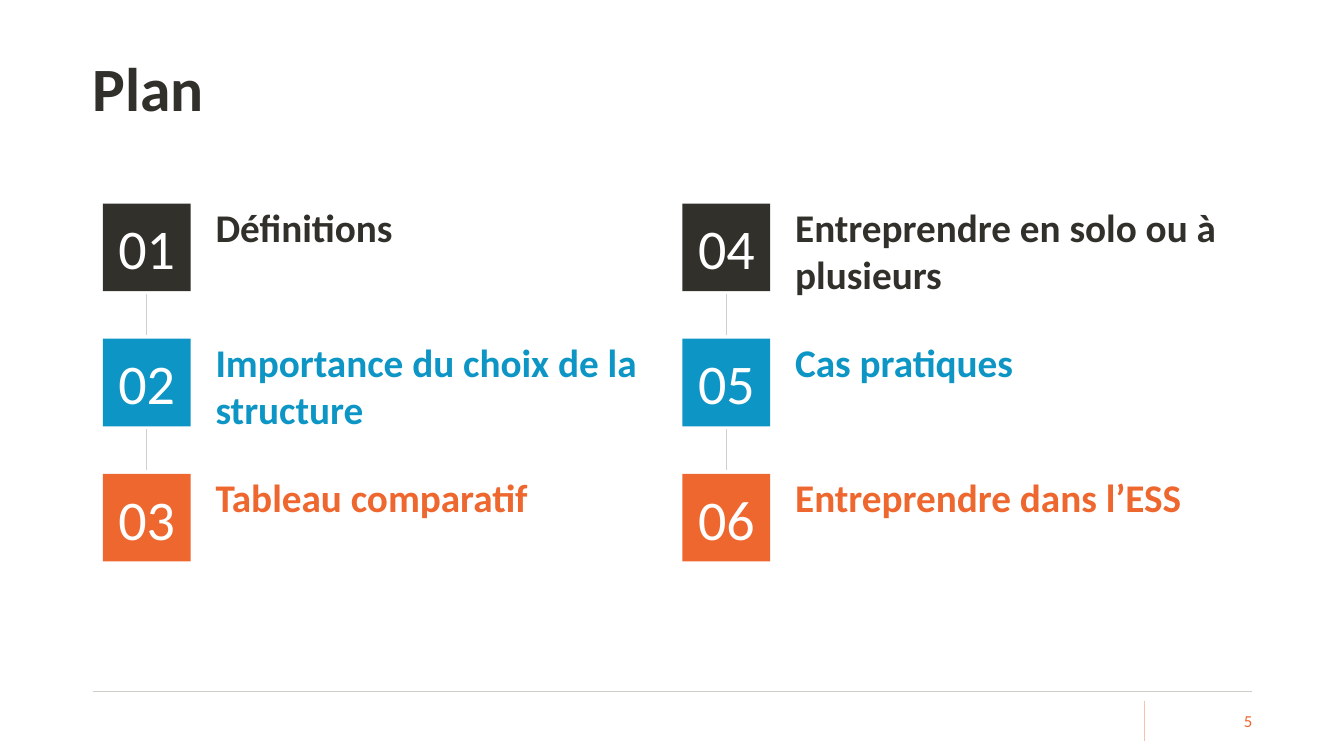
from lxml import etree
from pptx import Presentation
from pptx import util as u
from pptx.dml.color import RGBColor
from pptx.enum import shapes, text
from pptx.oxml import ns

COLORS = {
    "dark": "31302B",
    "blue": "0D96C5",
    "orange": "EE672F",
    "white": "FFFFFF",
    "link": "D0CECE",
    "rule": "CECDC7",
    "divider": "F8C2AC",
}


class PlanSlide:
    """Holds the style and the slide; lengths are percentages of the slide's size."""

    font = "Calibri"

    def __init__(self, presentation):
        self.width = presentation.slide_width
        self.height = presentation.slide_height
        self.slide = presentation.slides.add_slide(presentation.slide_layouts[6])

    def scale(self, x, y):
        return round(self.width * x / 100), round(self.height * y / 100)

    def color(self, name):
        return RGBColor.from_string(COLORS[name])

    def set_text(self, shape, content, size, color, bold=False, align="LEFT",
                 anchor="MIDDLE", insets=(0.1, 0.05, 0.1, 0.05)):
        frame = shape.text_frame
        frame.text = content
        frame.word_wrap = True
        frame.vertical_anchor = text.MSO_ANCHOR[anchor]
        (frame.margin_left, frame.margin_top,
         frame.margin_right, frame.margin_bottom) = map(u.Inches, insets)
        paragraph = frame.paragraphs[0]
        paragraph.alignment = text.PP_ALIGN[align]
        font = paragraph.runs[0].font
        font.name, font.size, font.bold = self.font, u.Pt(size), bold
        font.color.rgb = self.color(color)
        return frame

    def textbox(self, x, y, width, height, content, size, color, **style):
        shape = self.slide.shapes.add_textbox(
            *self.scale(x, y), *self.scale(width, height))
        return self.set_text(shape, content, size, color, **style)

    def square(self, x, y, width, height, content, fill):
        shape = self.slide.shapes.add_shape(
            shapes.MSO_SHAPE.RECTANGLE, *self.scale(x, y), *self.scale(width, height))
        shape.shadow.inherit = False
        shape.fill.solid()
        shape.fill.fore_color.rgb = self.color(fill)
        shape.line.fill.background()
        self.set_text(shape, content, 40, "white", align="CENTER")

    def line(self, x1, y1, x2, y2, color):
        connector = self.slide.shapes.add_connector(
            shapes.MSO_CONNECTOR.STRAIGHT, *self.scale(x1, y1), *self.scale(x2, y2))
        connector.line.width = u.Pt(0.5)
        connector.line.color.rgb = self.color(color)
        properties = connector.element.find(ns.qn("p:spPr"))
        etree.SubElement(properties, ns.qn("a:effectLst"))


# Agenda entries with their number of text lines
ENTRIES = [
    ("Définitions", 1),
    ("Importance du choix de la structure", 2),
    ("Tableau comparatif", 1),
    ("Entreprendre en solo ou à plusieurs", 2),
    ("Cas pratiques", 1),
    ("Entreprendre dans l’ESS", 1),
]
ROW_COLORS = ["dark", "blue", "orange"]
LEFT, TOP = 7.65, 26.93
COLUMN_STEP, ROW_STEP = 43.13, 17.87


def main():
    presentation = Presentation()
    presentation.slide_width = u.Inches(13.33)
    presentation.slide_height = u.Inches(7.5)
    plan = PlanSlide(presentation)

    # Footer rules
    plan.line(6.9, 91.47, 93.17, 91.47, "rule")
    plan.line(85.15, 92.67, 85.15, 98, "divider")

    # Title
    title = plan.textbox(6.9, 2.4, 78.54, 19.33, "Plan", 44, "dark",
                         bold=True, insets=(0, 0.05, 0.1, 0.05))
    title.paragraphs[0].line_spacing = 0.9

    # Agenda: two columns of three numbered entries
    for index, (label, line_count) in enumerate(ENTRIES):
        column, row = divmod(index, len(ROW_COLORS))
        x, y = LEFT + column * COLUMN_STEP, TOP + row * ROW_STEP
        color = ROW_COLORS[row]
        frame = plan.textbox(x + 7.65, y, 34.58, 6.27 * line_count, label, 28, color,
                             bold=True, anchor="TOP", insets=(0.1, 0, 0.1, 0))
        frame.auto_size = text.MSO_AUTO_SIZE.SHAPE_TO_FIT_TEXT
        plan.square(x, y, 6.53, 11.6, f"{index + 1:02}", color)
        if row < len(ROW_COLORS) - 1:
            plan.line(x + 3.25, y + 12, x + 3.25, y + 17.33, "link")

    # Slide number
    plan.textbox(86.05, 92.67, 7.13, 5.33, "5", 12, "orange",
                 align="RIGHT", insets=(0, 0.05, 0, 0.05))

    presentation.save("out.pptx")


if __name__ == "__main__":
    main()
